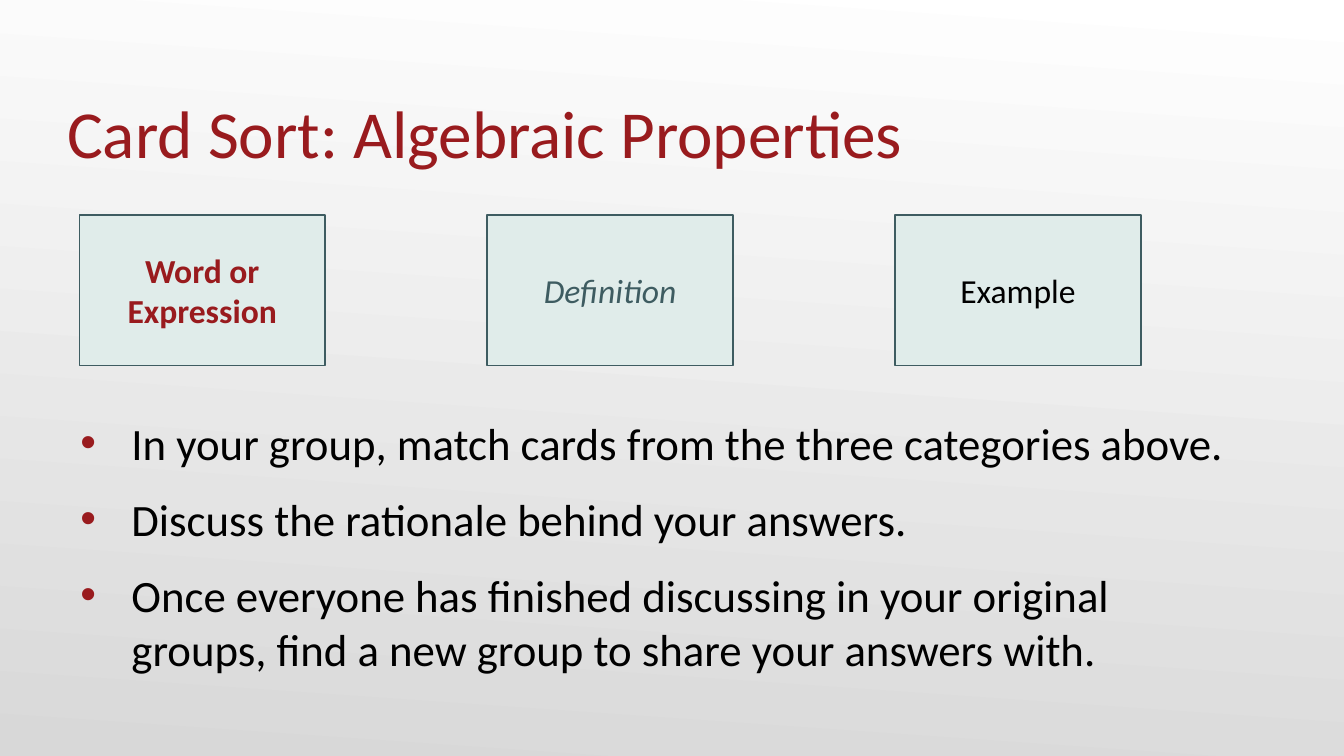
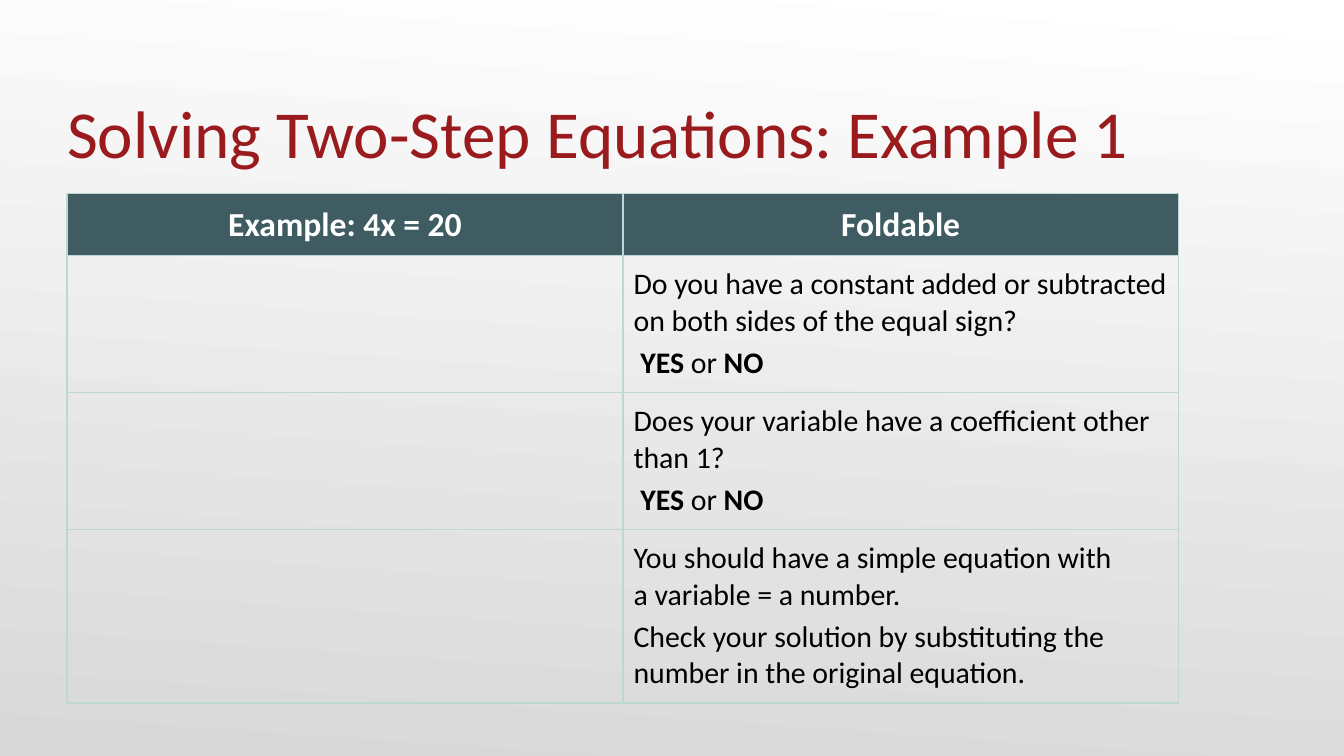
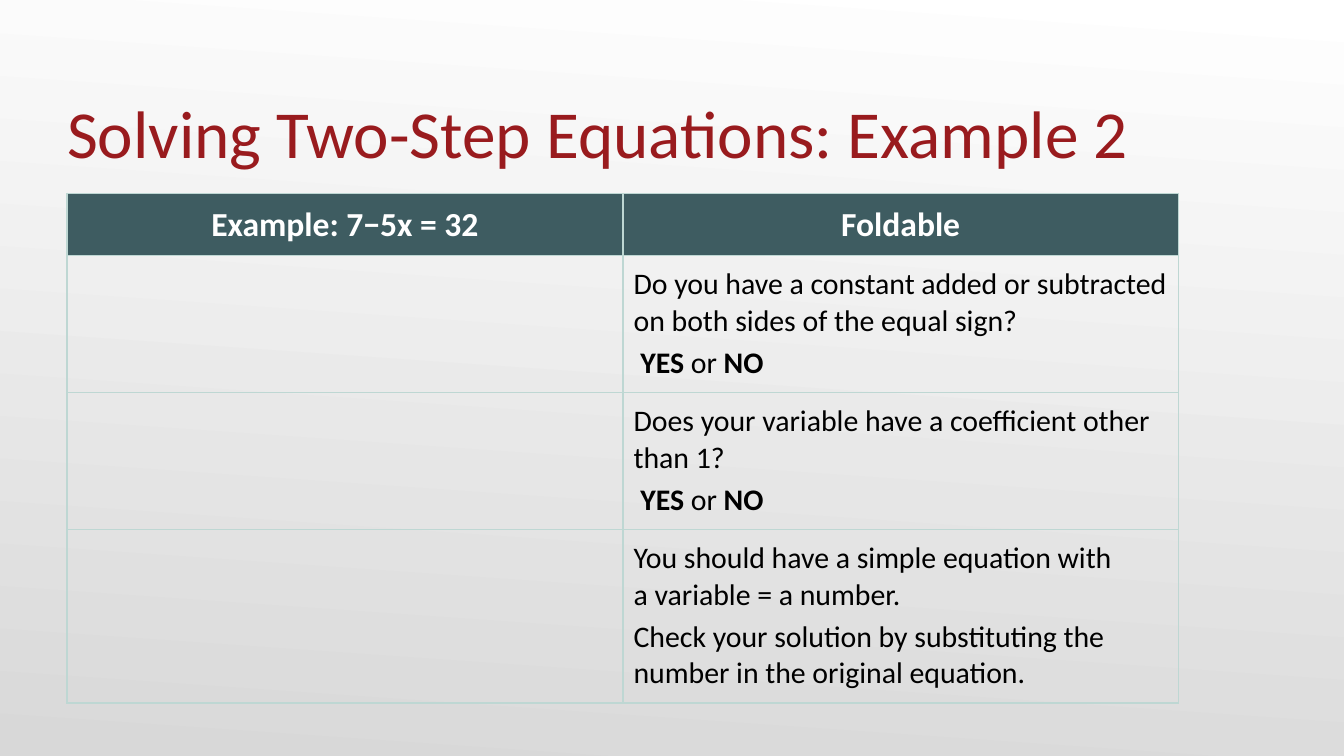
from dataclasses import dataclass
from typing import NamedTuple, Optional, Sequence, Union

from lxml.etree import SubElement
from pptx import Presentation
from pptx.dml.color import RGBColor
from pptx.enum.shapes import MSO_SHAPE as Shape
from pptx.enum.text import MSO_ANCHOR as Anchor, PP_ALIGN as Align
from pptx.oxml.ns import qn
from pptx.util import Inches, Pt


@dataclass(frozen=True)
class Theme:
    font: str = "Calibri"
    bullet_font: str = "Arial"
    red: str = "991B1E"
    teal: str = "3E5C61"
    mint: str = "E0ECEA"
    grid: str = "BED7D3"
    black: str = "000000"
    white: str = "FFFFFF"
    grey: str = "D8D8D8"
    title_size: int = 36
    body_size: int = 24
    label_size: int = 18
    cell_size: int = 16


THEME = Theme()


class Run(NamedTuple):
    text: str
    bold: bool = False


Paragraph = Union[str, Sequence[Run]]


class Card(NamedTuple):
    label: str
    color: str
    bold: bool = False
    italic: bool = False


class Example(NamedTuple):
    title: str
    equation: str


CARDS = (
    Card("Word or Expression", THEME.red, bold=True),
    Card("Definition", THEME.teal, italic=True),
    Card("Example", THEME.black),
)
INSTRUCTIONS = (
    "In your group, match cards from the three categories above.",
    "Discuss the rationale behind your answers.",
    "Once everyone has finished discussing in your original \n"
    "groups, find a new group to share your answers with.",
)
EXAMPLES = (
    Example("Solving Two-Step Equations: Example 1", "Example: 4x = 20"),
    Example("Solving Two-Step Equations: Example 2", "Example: 7−5x = 32"),
)
YES_OR_NO = (Run(" YES", True), Run(" or "), Run("NO ", True))
FOLDABLE_STEPS = (
    ("Do you have a constant added or subtracted on both sides of the equal sign?", YES_OR_NO),
    ("Does your variable have a coefficient other than 1?", YES_OR_NO),
    (
        "You should have a simple equation with \na variable = a number.",
        "Check your solution by substituting the number in the original equation.",
    ),
)
ROW_HEIGHTS = (0.35, 1.02, 1.02, 1.29)
CARD_FIRST_LEFT, CARD_LAST_LEFT = 0.59, 6.66


def rgb(color: str) -> RGBColor:
    return RGBColor.from_string(color)


def add_bullet(paragraph, indent: float, color: str) -> None:
    props = paragraph._p.get_or_add_pPr()
    props.set("marL", str(Inches(indent)))
    props.set("indent", str(-Inches(indent)))
    bullet_color = SubElement(props, qn("a:buClr"))
    SubElement(bullet_color, qn("a:srgbClr")).set("val", color)
    SubElement(props, qn("a:buFont")).set("typeface", THEME.bullet_font)
    SubElement(props, qn("a:buChar")).set("char", "•")


def write_text(frame, paragraphs: Sequence[Paragraph], *, size: int, color: str = THEME.black,
               bold: bool = False, italic: bool = False, align=Align.LEFT,
               space_after: float = 0, bullet_color: Optional[str] = None) -> None:
    for index, content in enumerate(paragraphs):
        paragraph = frame.paragraphs[0] if index == 0 else frame.add_paragraph()
        if bullet_color:
            add_bullet(paragraph, 0.38, bullet_color)
        paragraph.alignment = align
        if index < len(paragraphs) - 1:
            paragraph.space_after = Pt(space_after)
        runs = (Run(content, bold),) if isinstance(content, str) else content
        for part in runs:
            for line_number, line in enumerate(part.text.split("\n")):
                if line_number:
                    paragraph.add_line_break()
                run = paragraph.add_run()
                run.text = line
                run.font.name = THEME.font
                run.font.size = Pt(size)
                run.font.bold = part.bold
                run.font.italic = italic
                run.font.color.rgb = rgb(color)


def set_frame(frame, anchor, left: float, top: float, right: float, bottom: float) -> None:
    frame.word_wrap = True
    frame.vertical_anchor = anchor
    frame.margin_left, frame.margin_top = Inches(left), Inches(top)
    frame.margin_right, frame.margin_bottom = Inches(right), Inches(bottom)


def add_titled_slide(deck, title: str):
    slide = deck.slides.add_slide(deck.slide_layouts[6])
    backdrop = slide.background.fill
    backdrop.gradient()
    backdrop.gradient_angle = 360 - 94
    for stop, color in zip(backdrop.gradient_stops, (THEME.white, THEME.grey)):
        stop.color.rgb = rgb(color)
    heading = slide.shapes.add_textbox(Inches(0.5), Inches(0.34), Inches(9), Inches(0.94))
    set_frame(heading.text_frame, Anchor.BOTTOM, 0, 0.05, 0, 0)
    write_text(heading.text_frame, [title], size=THEME.title_size, color=THEME.red)
    return slide


def add_card(slide, card: Card, left: float) -> None:
    tile = slide.shapes.add_shape(
        Shape.RECTANGLE, Inches(left), Inches(1.6), Inches(1.83), Inches(1.12))
    tile.shadow.inherit = False
    tile.fill.solid()
    tile.fill.fore_color.rgb = rgb(THEME.mint)
    tile.line.color.rgb = rgb(THEME.teal)
    tile.line.width = Pt(0.75)
    set_frame(tile.text_frame, Anchor.MIDDLE, 0.1, 0.1, 0.1, 0.1)
    write_text(tile.text_frame, [card.label], size=THEME.label_size, color=card.color,
               bold=card.bold, italic=card.italic, align=Align.CENTER)


def add_card_sort(deck) -> None:
    slide = add_titled_slide(deck, "Card Sort: Algebraic Properties")
    instructions = slide.shapes.add_textbox(Inches(0.5), Inches(3.04), Inches(9), Inches(2.15))
    set_frame(instructions.text_frame, Anchor.TOP, 0.1, 0.05, 0.1, 0.05)
    write_text(instructions.text_frame, INSTRUCTIONS, size=THEME.body_size,
               space_after=12, bullet_color=THEME.red)
    pitch = (CARD_LAST_LEFT - CARD_FIRST_LEFT) / (len(CARDS) - 1)
    for index, card in enumerate(CARDS):
        add_card(slide, card, CARD_FIRST_LEFT + index * pitch)


def format_cell(cell, fill: Optional[str] = None) -> None:
    cell.margin_left = cell.margin_right = Inches(0.08)
    cell.margin_top = cell.margin_bottom = Inches(0.08)
    props = cell._tc.get_or_add_tcPr()
    for side in ("a:lnL", "a:lnR", "a:lnT", "a:lnB"):
        border = SubElement(props, qn(side))
        border.set("w", str(Pt(1)))
        stroke = SubElement(border, qn("a:solidFill"))
        SubElement(stroke, qn("a:srgbClr")).set("val", THEME.grid)
    if fill:
        cell.fill.solid()
        cell.fill.fore_color.rgb = rgb(fill)
    else:
        cell.fill.background()


def add_example(deck, example: Example) -> None:
    slide = add_titled_slide(deck, example.title)
    holder = slide.shapes.add_table(
        len(ROW_HEIGHTS), 2, Inches(0.5), Inches(1.44), Inches(8.27), Inches(3.73))
    worksheet = holder.table
    worksheet.first_row = worksheet.horz_banding = False
    for row, height in zip(worksheet.rows, ROW_HEIGHTS):
        row.height = Inches(height)
    holder.height = Inches(3.73)
    for row_index, row in enumerate(worksheet.rows):
        for cell in row.cells:
            format_cell(cell, THEME.teal if row_index == 0 else None)
    for column, header in enumerate((example.equation, "Foldable")):
        write_text(worksheet.cell(0, column).text_frame, [header], size=THEME.label_size,
                   color=THEME.white, bold=True, align=Align.CENTER)
    for row_index, step in enumerate(FOLDABLE_STEPS, start=1):
        write_text(worksheet.cell(row_index, 1).text_frame, step,
                   size=THEME.cell_size, space_after=3)


def main() -> None:
    deck = Presentation()
    deck.slide_width = Inches(10)
    deck.slide_height = deck.slide_width * 9 // 16
    add_card_sort(deck)
    for example in EXAMPLES:
        add_example(deck, example)
    deck.save("out.pptx")


if __name__ == "__main__":
    main()
